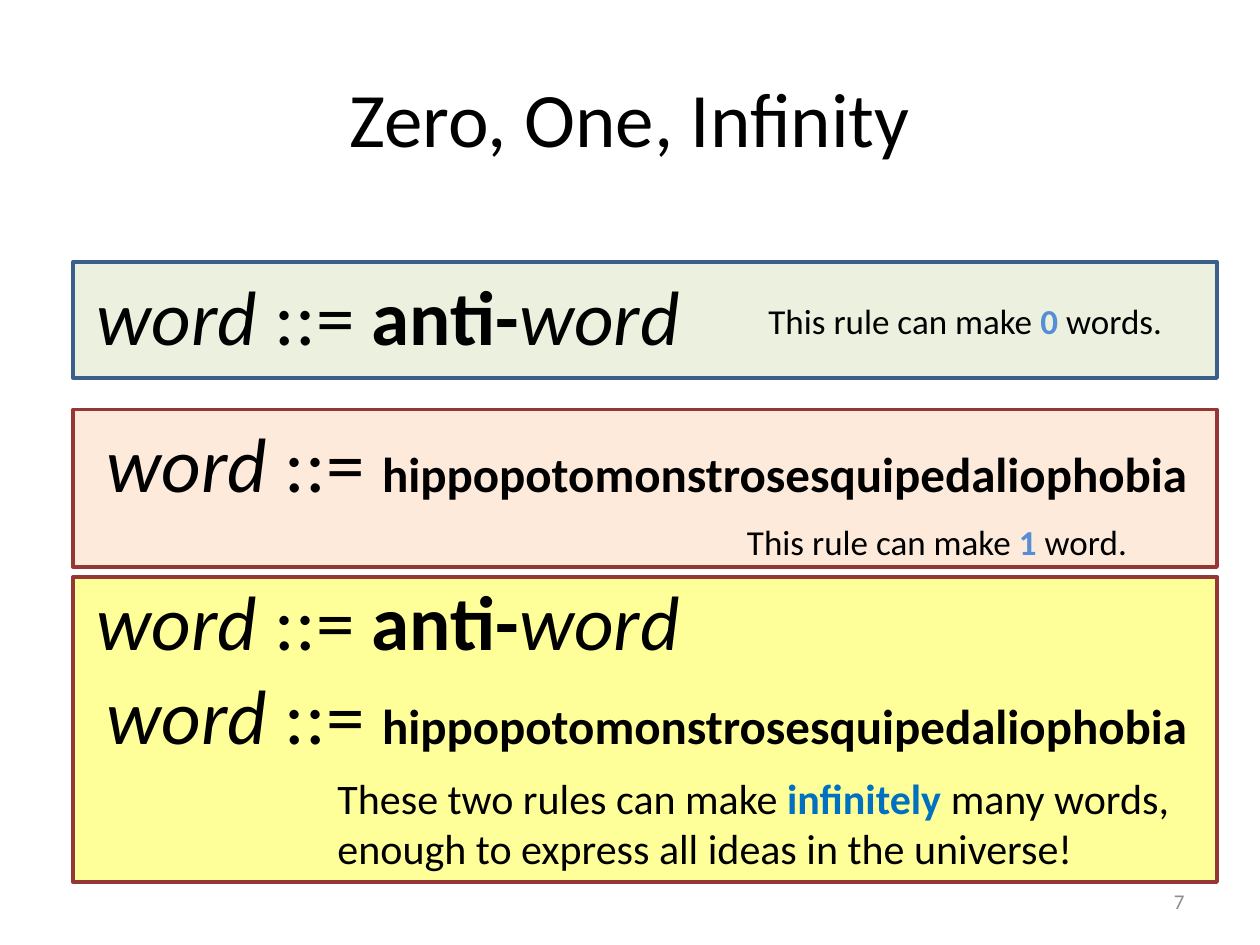
from dataclasses import dataclass

from pptx import Presentation
from pptx.dml.color import RGBColor
from pptx.enum.shapes import MSO_SHAPE
from pptx.enum.text import MSO_ANCHOR, MSO_AUTO_SIZE, PP_ALIGN
from pptx.util import Inches, Pt

RECTANGLE = MSO_SHAPE.RECTANGLE
MIDDLE, TOP = MSO_ANCHOR.MIDDLE, MSO_ANCHOR.TOP
FIT_SHAPE, NO_FIT = MSO_AUTO_SIZE.SHAPE_TO_FIT_TEXT, MSO_AUTO_SIZE.NONE
LEFT, CENTER, RIGHT = PP_ALIGN.LEFT, PP_ALIGN.CENTER, PP_ALIGN.RIGHT
TITLE_ONLY = 5


@dataclass(frozen=True)
class Theme:
    """Colours and type sizes of the slide."""

    font: str = "Calibri"
    ink: str = "000000"
    muted: str = "8C8C8C"
    count: str = "558ED5"
    infinite: str = "0070C0"
    green: str = "EBF1DE"
    peach: str = "FDEADA"
    yellow: str = "FFFF99"
    blue_edge: str = "3A5F8C"
    red_edge: str = "953735"
    rule: int = 44
    long_word: int = 28
    conclusion: int = 24
    remark: int = 20
    number: int = 12


THEME = Theme()


def add_run(paragraph, text, size=THEME.rule, color=THEME.ink, bold=False, italic=False):
    """Append formatted text to a paragraph."""
    run = paragraph.add_run()
    run.text = text
    font = run.font
    font.name, font.size = THEME.font, Pt(size)
    font.bold, font.italic = bold, italic
    font.color.rgb = RGBColor.from_string(color)


class SlideBuilder:
    """Holds the theme and the current slide and adds elements to it."""

    def __init__(self, slide, theme):
        self.slide = slide
        self.theme = theme

    def title(self, text, box):
        """Place and format the title placeholder."""
        heading = self.slide.shapes.title
        heading.left, heading.top, heading.width, heading.height = map(Inches, box)
        heading.text_frame.vertical_anchor = MIDDLE
        paragraph = heading.text_frame.paragraphs[0]
        paragraph.alignment = CENTER
        add_run(paragraph, text)

    def panel(self, top, height, fill, edge):
        """Add a full-width coloured panel."""
        panel = self.slide.shapes.add_shape(
            RECTANGLE, Inches(0.58), Inches(top), Inches(9.08), Inches(height))
        panel.shadow.inherit = False
        panel.fill.solid()
        panel.fill.fore_color.rgb = RGBColor.from_string(fill)
        panel.line.color.rgb = RGBColor.from_string(edge)
        panel.line.width = Pt(2)

    def text(self, box, runs, wrap=False, fit=FIT_SHAPE, anchor=TOP, align=LEFT):
        """Add a text box from (text, format) pairs."""
        frame = self.slide.shapes.add_textbox(*map(Inches, box)).text_frame
        frame.word_wrap, frame.auto_size = wrap, fit
        frame.vertical_anchor = anchor
        paragraph = frame.paragraphs[0]
        paragraph.alignment = align
        for words, style in runs:
            add_run(paragraph, words, **style)

    def rule(self, box, *expansion):
        """Add a grammar rule that defines a word."""
        self.text(box, [("word", {"italic": True}), (" ::= ", {}), *expansion])

    def prefix_rule(self, top):
        """Add the recursive rule."""
        self.rule((0.67, top, 4.95, 0.84),
                  ("anti-", {"bold": True}), ("word", {"italic": True}))

    def long_word_rule(self, top):
        """Add the rule that ends in one long word."""
        self.rule((0.75, top, 8.93, 0.84),
                  ("hippopotomonstrosesquipedaliophobia",
                   {"size": self.theme.long_word, "bold": True}))

    def remark(self, box, before, key, after, size, color, wrap=False):
        """Add a remark with one highlighted key word."""
        self.text(box, [(before, {"size": size}),
                        (key, {"size": size, "color": color, "bold": True}),
                        (after, {"size": size})], wrap=wrap)


def main():
    """Build and save the slide."""
    deck = Presentation()
    deck.slide_width, deck.slide_height = Inches(10), Inches(7.5)
    slide = deck.slides.add_slide(deck.slide_layouts[TITLE_ONLY])
    builder = SlideBuilder(slide, THEME)

    builder.title("Zero, One, Infinity", (0.5, 0.3, 9, 1.25))
    builder.panel(4.58, 2.42, THEME.yellow, THEME.red_edge)
    builder.panel(3.25, 1.25, THEME.peach, THEME.red_edge)
    builder.panel(2.08, 0.92, THEME.green, THEME.blue_edge)

    for top in (2.08, 4.5):
        builder.prefix_rule(top)
    for top in (3.25, 5.25):
        builder.long_word_rule(top)

    for left, top, count, noun in ((6, 2.33, "0", " words."), (5.83, 4.08, "1", " word.")):
        builder.remark((left, top, 3.35, 0.44), "This rule can make ", count, noun,
                       THEME.remark, THEME.count)
    builder.remark((2.58, 6.08, 6.92, 0.91), "These two rules can make ", "infinitely",
                   " many words, enough to express all ideas in the universe!",
                   THEME.conclusion, THEME.infinite, wrap=True)
    builder.text((7.17, 6.95, 2.33, 0.4),
                 [("7", {"size": THEME.number, "color": THEME.muted})],
                 wrap=True, fit=NO_FIT, anchor=MIDDLE, align=RIGHT)

    deck.save("out.pptx")


if __name__ == "__main__":
    main()
